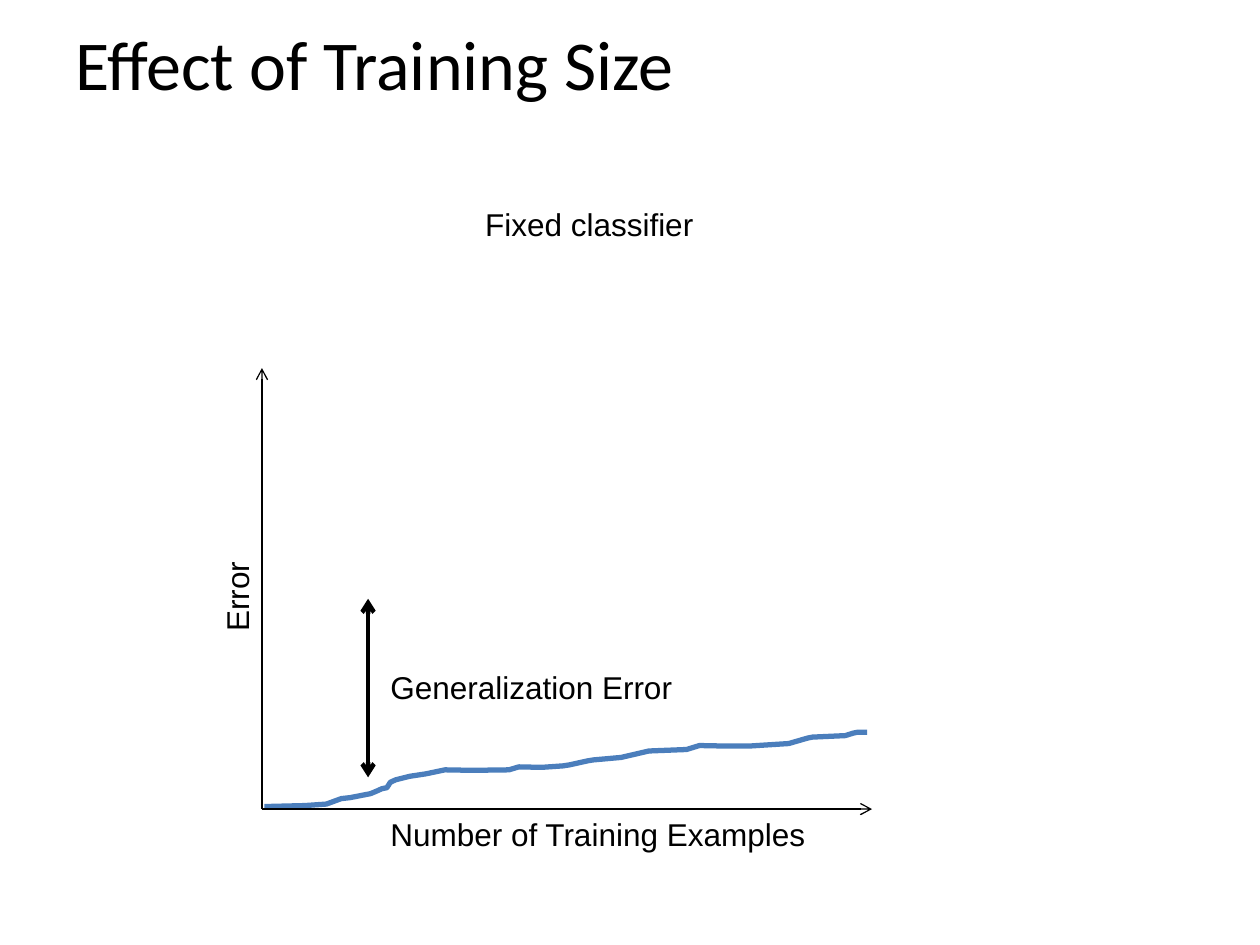
import pptx
import pptx.dml.color
import pptx.enum.shapes
import pptx.enum.text
import pptx.oxml.ns
import pptx.util
from lxml import etree

Cm = pptx.util.Cm
BLACK = pptx.dml.color.RGBColor(0x00, 0x00, 0x00)
BLUE = pptx.dml.color.RGBColor(0x4B, 0x7E, 0xBC)

# Curve points in hundredths of a centimetre
TRAINING_CURVE = [
    (533, 1626), (615, 1624), (658, 1621), (688, 1610), (706, 1608), (747, 1600),
    (759, 1595), (770, 1590), (780, 1588), (787, 1577), (798, 1572), (826, 1565),
    (859, 1560), (897, 1552), (952, 1553), (1026, 1552), (1046, 1546), (1092, 1547),
    (1135, 1544), (1148, 1542), (1184, 1534), (1196, 1532), (1252, 1527), (1278, 1521),
    (1308, 1514), (1384, 1511), (1410, 1503), (1460, 1504), (1511, 1504), (1590, 1499),
    (1628, 1488), (1638, 1486), (1704, 1483), (1720, 1478), (1730, 1476), (1748, 1476),
]

presentation = pptx.Presentation()
presentation.slide_width = Cm(25.4)
presentation.slide_height = Cm(19.05)
slide = presentation.slides.add_slide(presentation.slide_layouts[6])
shapes = slide.shapes


def add_label(text, left, top, width, height, size=18, font="Arial"):
    box = shapes.add_textbox(Cm(left), Cm(top), Cm(width), Cm(height))
    box.text_frame.text = text
    box.text_frame.word_wrap = False
    run = box.text_frame.paragraphs[0].runs[0]
    run.font.size = pptx.util.Pt(size)
    run.font.name = font
    run.font.color.rgb = BLACK
    return box


def add_arrow(start, end, width, ends):
    points = [Cm(value) for value in start + end]
    arrow = shapes.add_connector(pptx.enum.shapes.MSO_CONNECTOR.STRAIGHT, *points)
    arrow.line.color.rgb = BLACK
    arrow.line.width = pptx.util.Pt(width)
    line = arrow.line._get_or_add_ln()
    for end_name in ends:
        etree.SubElement(line, pptx.oxml.ns.qn("a:" + end_name), type="arrow")
    etree.SubElement(arrow._element.spPr, pptx.oxml.ns.qn("a:effectLst"))


# Title
title = add_label("Effect of Training Size", 1.27, 0, 22.86, 2.54, 40, "Calibri")
title.text_frame.word_wrap = True
title.text_frame.vertical_anchor = pptx.enum.text.MSO_ANCHOR.MIDDLE

# Training error curve
builder = shapes.build_freeform(*TRAINING_CURVE[0], scale=Cm(0.01))
builder.add_line_segments(TRAINING_CURVE[1:], close=False)
curve = builder.convert_to_shape()
curve.shadow.inherit = False
curve.fill.background()
curve.line.color.rgb = BLUE
curve.line.width = pptx.util.Pt(3)

# Axes and their labels
ORIGIN = (5.28, 16.31)
add_arrow(ORIGIN, (17.58, 16.31), 0.75, ["tailEnd"])
add_label("Number of Training Examples", 7.62, 16.31, 8.97, 1.02)
error_label = add_label("Error", 3.81, 11.51, 1.93, 1.02)
error_label.rotation = 270
add_arrow(ORIGIN, (5.28, 7.42), 0.75, ["tailEnd"])

# Generalization gap and captions
add_arrow((7.42, 15.67), (7.42, 12.07), 2.5, ["headEnd", "tailEnd"])
add_label("Generalization Error", 7.62, 13.34, 6.25, 1.02)
add_label("Fixed classifier", 9.53, 4.01, 4.75, 1.02)

presentation.save("out.pptx")
